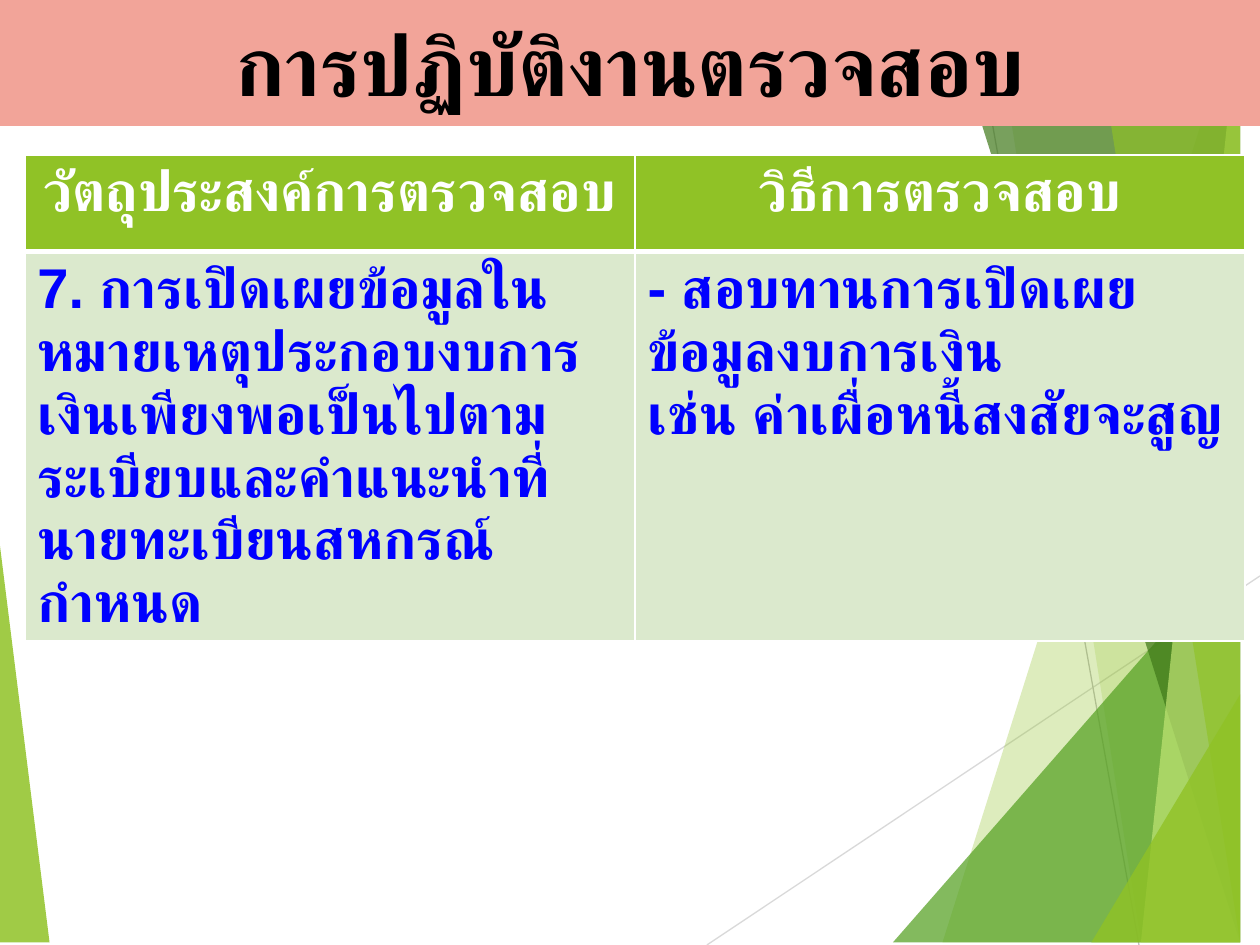
from lxml import etree
from pptx import Presentation, util as u
from pptx.dml.color import RGBColor
from pptx.enum import shapes, text
from pptx.oxml import parse_xml
from pptx.oxml.ns import nsdecls, qn

WHITE = RGBColor(0xFF, 0xFF, 0xFF)
BLACK = RGBColor(0, 0, 0)
BLUE = RGBColor(0, 0, 0xFF)
LIME = RGBColor(0x90, 0xC2, 0x26)
GREEN = RGBColor(0x54, 0xA0, 0x21)
DARK_GREEN = RGBColor(0x3F, 0x78, 0x19)
PALE_LIME = RGBColor(0xC0, 0xE4, 0x74)
PALE_GREEN = RGBColor(0xDB, 0xE9, 0xCD)
SALMON = RGBColor(0xF2, 0xA4, 0x99)
LIGHT_GREY = RGBColor(0xD9, 0xD9, 0xD9)
GREY = RGBColor(0xBF, 0xBF, 0xBF)
W, H = 25.4, 19.05


def write(tf, content, size, font, color, align=text.PP_ALIGN.LEFT):
    """Write one bold paragraph per line, with the font also set for Thai."""
    for i, line in enumerate(content.split("\n")):
        p = tf.paragraphs[0] if i == 0 else tf.add_paragraph()
        p.alignment = align
        r = p.add_run()
        r.text = line
        r.font.size = u.Pt(size)
        r.font.bold = True
        r.font.name = font
        r.font.color.rgb = color
        etree.SubElement(r.font._element, qn("a:cs"), typeface=font)


prs = Presentation()
prs.slide_width, prs.slide_height = u.Cm(W), u.Cm(H)
s = prs.slides.add_slide(prs.slide_layouts[6])

# Background lines
for x1, y1, x2, y2, color in [
    (14.25, H, W, 11.61, LIGHT_GREY),
    (19.56, 0, 22.96, H, GREY),
]:
    line = s.shapes.add_connector(
        shapes.MSO_CONNECTOR.STRAIGHT, u.Cm(x1), u.Cm(y1), u.Cm(x2), u.Cm(y2))
    line.line.color.rgb = color
    line.line.width = u.Pt(0.75)
    etree.SubElement(line._element.spPr, qn("a:effectLst"))

# Translucent facets: corner points in cm, colour, opacity in percent
facets = [
    ([(0, 11.15), (1.24, H), (0, H)], LIME, 85),
    ([(24.77, 0), (19.15, H), (W, H), (W, 0)], LIME, 30),
    ([(20.02, 0), (23.34, H), (W, H), (W, 0)], LIME, 20),
    ([(18.44, H), (W, 10.9), (W, H)], GREEN, 72),
    ([(19.48, 0), (24.64, H), (W, H), (W, 0)], DARK_GREEN, 70),
    ([(24.92, 0), (23.04, H), (W, H), (W, 0)], PALE_LIME, 70),
    ([(22.43, 0), (25.04, H), (W, H), (25.35, 0)], LIME, 65),
    ([(22.38, H), (W, 13.59), (W, H)], LIME, 80),
]
for points, color, opacity in facets:
    fb = s.shapes.build_freeform(*points[0], scale=u.Cm(1))
    fb.add_line_segments(points[1:], close=True)
    sp = fb.convert_to_shape()
    sp.shadow.inherit = False
    sp.fill.solid()
    sp.fill.fore_color.rgb = color
    sp.line.fill.background()
    srgb = sp._element.spPr.find(".//" + qn("a:srgbClr"))
    etree.SubElement(srgb, qn("a:alpha"), val=str(opacity * 1000))

# Audit table
rows = [
    ("วัตถุประสงค์การตรวจสอบ", "วิธีการตรวจสอบ"),
    ("7. การเปิดเผยข้อมูลในหมายเหตุประกอบงบการเงินเพียงพอเป็นไปตามระเบียบและคำแนะนำที่นายทะเบียนสหกรณ์กำหนด",
     "- สอบทานการเปิดเผยข้อมูลงบการเงิน\nเช่น ค่าเผื่อหนี้สงสัยจะสูญ"),
]
table = s.shapes.add_table(
    2, 2, u.Cm(0.5), u.Cm(3.12), u.Cm(24.6), u.Cm(9.6)).table
table.rows[0].height, table.rows[1].height = u.Cm(1.95), u.Cm(7.65)
for i, row in enumerate(rows):
    header = i == 0
    for j, content in enumerate(row):
        cell = table.cell(i, j)
        write(cell.text_frame, content, 32, "Arial", WHITE if header else BLUE,
              text.PP_ALIGN.CENTER if header else text.PP_ALIGN.LEFT)
        tcPr = cell._tc.get_or_add_tcPr()
        for side in "LRTB":
            thick = (header and side == "B") or (not header and side == "T")
            tcPr.append(parse_xml(
                f'<a:ln{side} {nsdecls("a")} w="{u.Pt(3 if thick else 1)}">'
                f'<a:solidFill><a:srgbClr val="{WHITE}"/></a:solidFill></a:ln{side}>'))
        cell.fill.solid()
        cell.fill.fore_color.rgb = LIME if header else PALE_GREEN

# Title band
band = s.shapes.add_shape(
    shapes.MSO_SHAPE.RECTANGLE, 0, 0, u.Cm(W), u.Cm(2.54))
band.shadow.inherit = False
band.fill.solid()
band.fill.fore_color.rgb = SALMON
band.line.fill.background()
band.text_frame.word_wrap = True
band.text_frame.vertical_anchor = text.MSO_ANCHOR.MIDDLE
write(band.text_frame, "การปฏิบัติงานตรวจสอบ", 48, "Roboto", BLACK,
      text.PP_ALIGN.CENTER)

prs.save("out.pptx")
